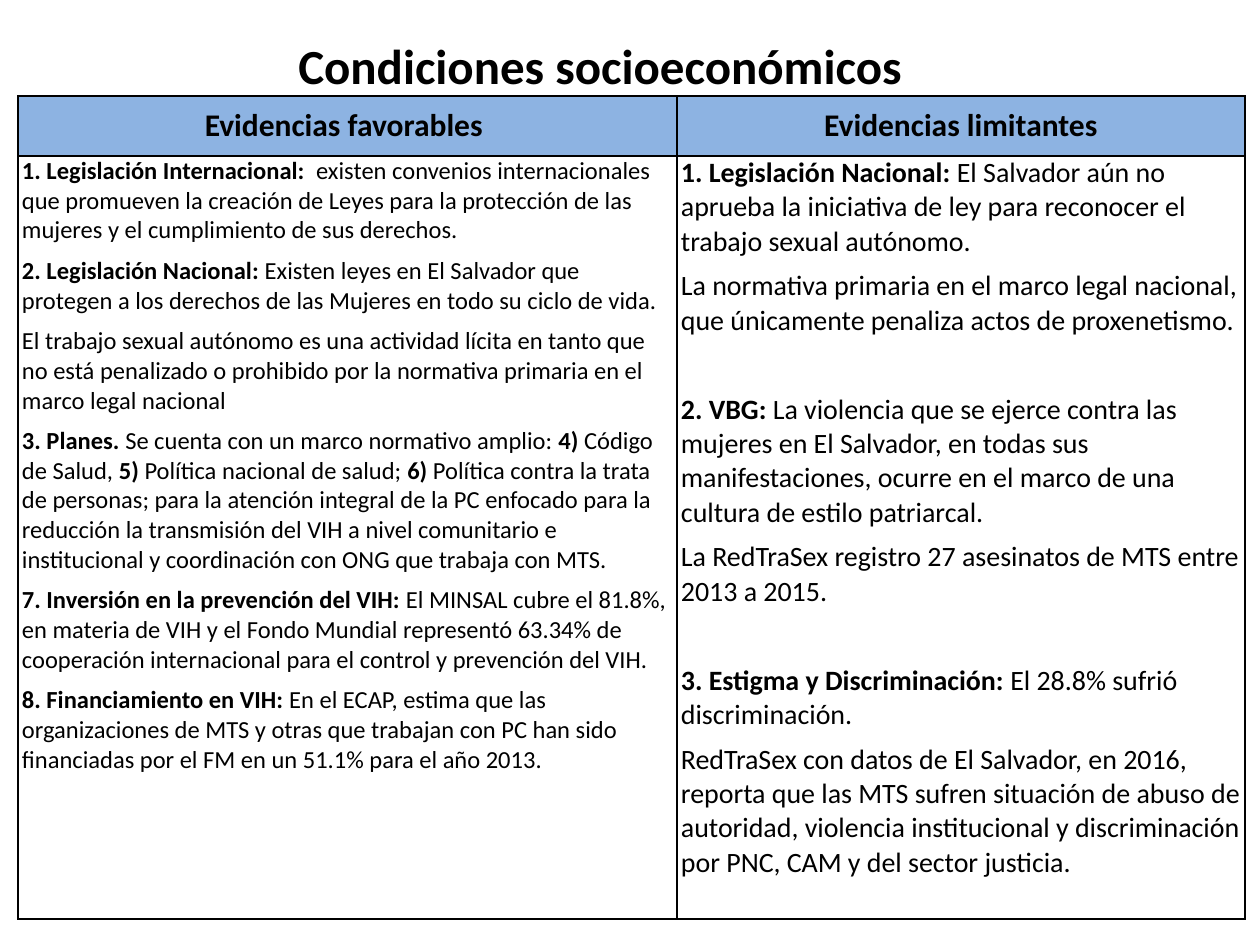
"""Builds the slide comparing favourable and limiting socioeconomic evidence."""
from dataclasses import dataclass

from lxml import etree
from pptx import Presentation
from pptx.dml.color import RGBColor
from pptx.enum.text import MSO_ANCHOR, MSO_AUTO_SIZE, PP_ALIGN
from pptx.oxml.ns import qn
from pptx.util import Pt

PX = 914400 // 126
CENTER, LEFT = PP_ALIGN.CENTER, PP_ALIGN.LEFT
MIDDLE, TOP = MSO_ANCHOR.MIDDLE, MSO_ANCHOR.TOP
FIXED = MSO_AUTO_SIZE.NONE


@dataclass(frozen=True)
class Theme:
    font: str = "Calibri"
    ink: str = "000000"
    header: str = "8DB3E2"
    title_size: int = 28
    header_size: int = 18
    favorable_size: int = 14
    limiting_size: int = 16
    gap: float = 6
    topic_gap: float = 31.5


THEME = Theme()


def add_run(paragraph, text, size, bold):
    run = paragraph.add_run()
    run.text = text
    run.font.name = THEME.font
    run.font.size = Pt(size)
    run.font.bold = bold
    run.font.color.rgb = RGBColor.from_string(THEME.ink)


def style_cell(cell, anchor):
    cell.vertical_anchor = anchor
    cell.margin_left = cell.margin_right = 4 * PX
    cell.margin_top = cell.margin_bottom = 0
    properties = cell._tc.get_or_add_tcPr()
    for side in ("a:lnL", "a:lnR", "a:lnT", "a:lnB"):
        border = etree.SubElement(properties, qn(side), w=str(Pt(1)))
        ink = etree.SubElement(border, qn("a:solidFill"))
        etree.SubElement(ink, qn("a:srgbClr"), val=THEME.ink)


# Runs alternate between bold and regular, starting with bold.
favorable = [
    (THEME.gap, ["1. Legislación Internacional:  ",
                 "existen convenios internacionales que promueven la creación de Leyes "
                 "para la protección de las mujeres y el cumplimiento de sus derechos."]),
    (THEME.gap, ["2. Legislación Nacional: ",
                 "Existen leyes en El Salvador que protegen a los derechos de las Mujeres "
                 "en todo su ciclo de vida."]),
    (THEME.gap, ["", "El trabajo sexual autónomo es una actividad lícita en tanto que no está "
                 "penalizado o prohibido por la normativa primaria en el marco legal nacional"]),
    (THEME.gap, ["3. Planes. ", "Se cuenta con un marco normativo amplio: ",
                 "4) ", "Código de Salud, ",
                 "5) ", "Política nacional de salud; ",
                 "6)", " Política contra la trata de personas; para la atención integral de la PC "
                 "enfocado para la reducción la transmisión del VIH a nivel comunitario e "
                 "institucional y coordinación con ONG que trabaja con MTS."]),
    (THEME.gap, ["7. Inversión en la prevención del VIH: ",
                 "El MINSAL cubre el 81.8%, en materia de VIH y el Fondo Mundial representó "
                 "63.34% de cooperación internacional para el control y prevención del VIH."]),
    (THEME.gap, ["8. Financiamiento en VIH: ",
                 "En el ECAP, estima que las organizaciones de MTS y otras que trabajan con PC "
                 "han sido financiadas por el FM en un 51.1% para el año 2013."]),
]
limiting = [
    (THEME.gap, ["1. Legislación Nacional: ",
                 "El Salvador aún no aprueba la iniciativa de ley para reconocer el trabajo "
                 "sexual autónomo."]),
    (THEME.gap, ["", "La normativa primaria en el marco legal nacional, que únicamente penaliza "
                 "actos de proxenetismo."]),
    (THEME.topic_gap, ["2. VBG: ",
                       "La violencia que se ejerce contra las mujeres en El Salvador, en todas sus "
                       "manifestaciones, ocurre en el marco de una cultura de estilo patriarcal."]),
    (THEME.gap, ["", "La RedTraSex registro 27 asesinatos de MTS entre 2013 a 2015."]),
    (THEME.topic_gap, ["3. Estigma y Discriminación: ", "El 28.8% sufrió discriminación."]),
    (THEME.gap, ["", "RedTraSex con datos de El Salvador, en 2016, reporta que las MTS sufren "
                 "situación de abuso de autoridad, violencia institucional y discriminación por "
                 "PNC, CAM y del sector justicia."]),
]
columns = [
    ("Evidencias favorables ", 659, THEME.favorable_size, favorable),
    ("Evidencias limitantes", 568, THEME.limiting_size, limiting),
]
row_heights = (60, 763)

deck = Presentation()
deck.slide_width, deck.slide_height = 1260 * PX, 945 * PX
slide = deck.slides.add_slide(deck.slide_layouts[5])

title = slide.shapes.title
title.left, title.top, title.width, title.height = 15 * PX, 29 * PX, 1181 * PX, 72 * PX
title.text_frame.auto_size = FIXED
heading = title.text_frame.paragraphs[0]
heading.alignment = CENTER
add_run(heading, "Condiciones socioeconómicos ", THEME.title_size, True)

total_width = sum(width for _, width, _, _ in columns)
evidence = slide.shapes.add_table(
    2, 2, 18 * PX, 96 * PX, total_width * PX, sum(row_heights) * PX).table
evidence.first_row = evidence.horz_banding = False
for row, height in zip(evidence.rows, row_heights):
    row.height = height * PX

for index, (label, width, size, entries) in enumerate(columns):
    evidence.columns[index].width = width * PX

    header = evidence.cell(0, index)
    style_cell(header, MIDDLE)
    header.fill.solid()
    header.fill.fore_color.rgb = RGBColor.from_string(THEME.header)
    caption = header.text_frame.paragraphs[0]
    caption.alignment = CENTER
    add_run(caption, label, THEME.header_size, True)

    body = evidence.cell(1, index)
    style_cell(body, TOP)
    body.fill.background()
    for number, (space, texts) in enumerate(entries):
        frame = body.text_frame
        entry = frame.add_paragraph() if number else frame.paragraphs[0]
        entry.alignment = LEFT
        entry.space_before = Pt(space)
        for position, text in enumerate(texts):
            if text:
                add_run(entry, text, size, position % 2 == 0)

deck.save("out.pptx")
